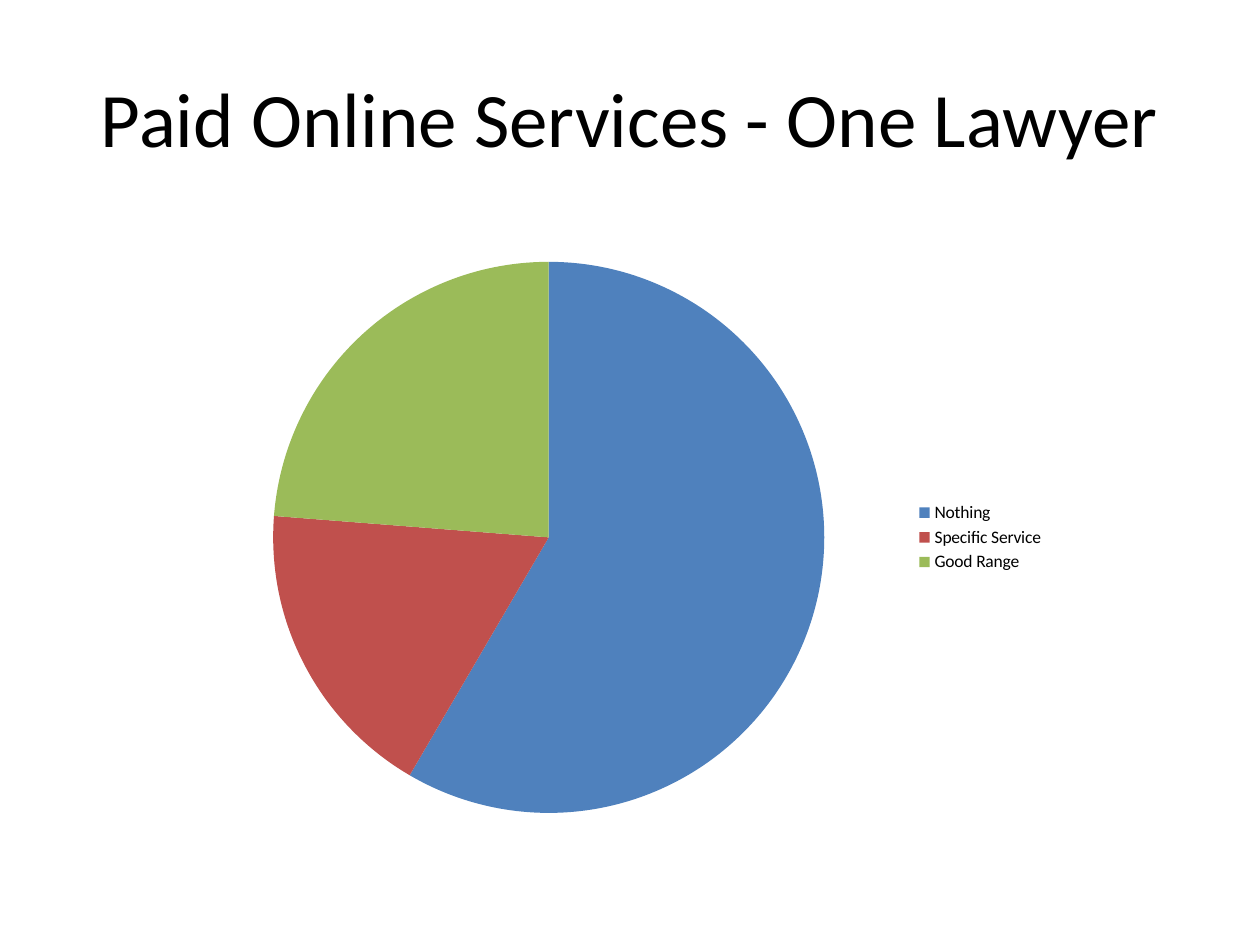
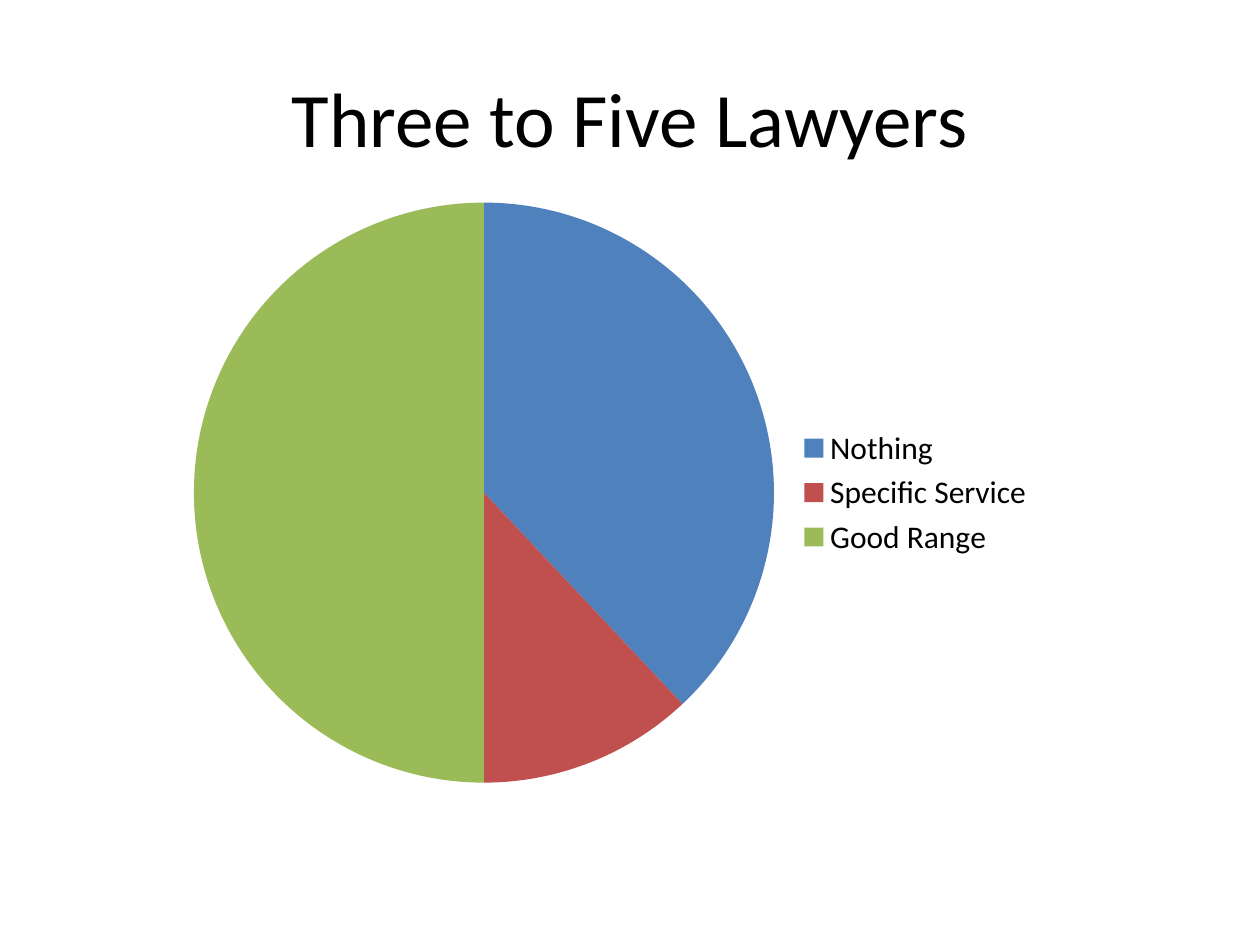
from pptx import Presentation
from pptx.chart.data import CategoryChartData as ChartData
from pptx.dml.color import RGBColor
from pptx.enum.chart import XL_CHART_TYPE as ChartType, XL_LEGEND_POSITION as LegendPosition
from pptx.enum.text import MSO_ANCHOR as Anchor, PP_ALIGN as Align
from pptx.util import Pt

FONT = "Calibri"
BLACK = "000000"
TITLE_BOX = (36, 21.6, 648, 90)
TITLE_ONLY_LAYOUT = 5
SERVICE_COLORS = {
    "Nothing": "4F81BD",
    "Specific Service": "C0504D",
    "Good Range": "9BBB59",
}
SLIDES = [
    {
        "title": "Paid Online Services - One Lawyer",
        "values": (59, 18, 24),
        "box": (105.12, 139.68, 498.96, 334.8),
        "legend_size": 10,
    },
    {
        "title": "Three to Five Lawyers",
        "values": (38, 12, 50),
        "box": (99.36, 105.84, 498.96, 351.36),
        "legend_size": 18,
    },
]


def rgb(color):
    """Return the colour for a hex string."""
    return RGBColor.from_string(color)


def apply_format(target, values):
    """Set each attribute of the target from a dict."""
    for name, value in values.items():
        setattr(target, name, value)


def format_font(font, size):
    """Give a font the shared face and colour at a size."""
    apply_format(font, {"name": FONT, "size": Pt(size)})
    font.color.rgb = rgb(BLACK)


def add_title(slide, text):
    """Fill and format the title placeholder."""
    title = slide.shapes.title
    apply_format(title, dict(zip(("left", "top", "width", "height"), map(Pt, TITLE_BOX))))
    title.text_frame.text = text
    apply_format(title.text_frame, {"vertical_anchor": Anchor.MIDDLE, "word_wrap": True})
    paragraph = title.text_frame.paragraphs[0]
    paragraph.alignment = Align.CENTER
    format_font(paragraph.runs[0].font, 44)


def add_service_pie(slide, values, box, legend_size):
    """Add a pie of service levels with a legend on the right."""
    data = ChartData()
    data.categories = list(SERVICE_COLORS)
    data.add_series("Series 1", values)
    chart = slide.shapes.add_chart(ChartType.PIE, *map(Pt, box), data).chart
    apply_format(chart, {"has_title": False, "has_legend": True})
    apply_format(chart.legend, {"position": LegendPosition.RIGHT, "include_in_layout": False})
    format_font(chart.font, 10)
    format_font(chart.legend.font, legend_size)
    plot = chart.plots[0]
    plot.vary_by_categories = True
    for index, color in enumerate(SERVICE_COLORS.values()):
        fill = plot.series[0].points[index].format.fill
        fill.solid()
        fill.fore_color.rgb = rgb(color)


def main():
    """Build and save the presentation."""
    presentation = Presentation()
    apply_format(presentation, {"slide_width": Pt(720), "slide_height": Pt(540)})
    for content in SLIDES:
        slide = presentation.slides.add_slide(presentation.slide_layouts[TITLE_ONLY_LAYOUT])
        add_title(slide, content["title"])
        add_service_pie(slide, content["values"], content["box"], content["legend_size"])
    presentation.save("out.pptx")


if __name__ == "__main__":
    main()
